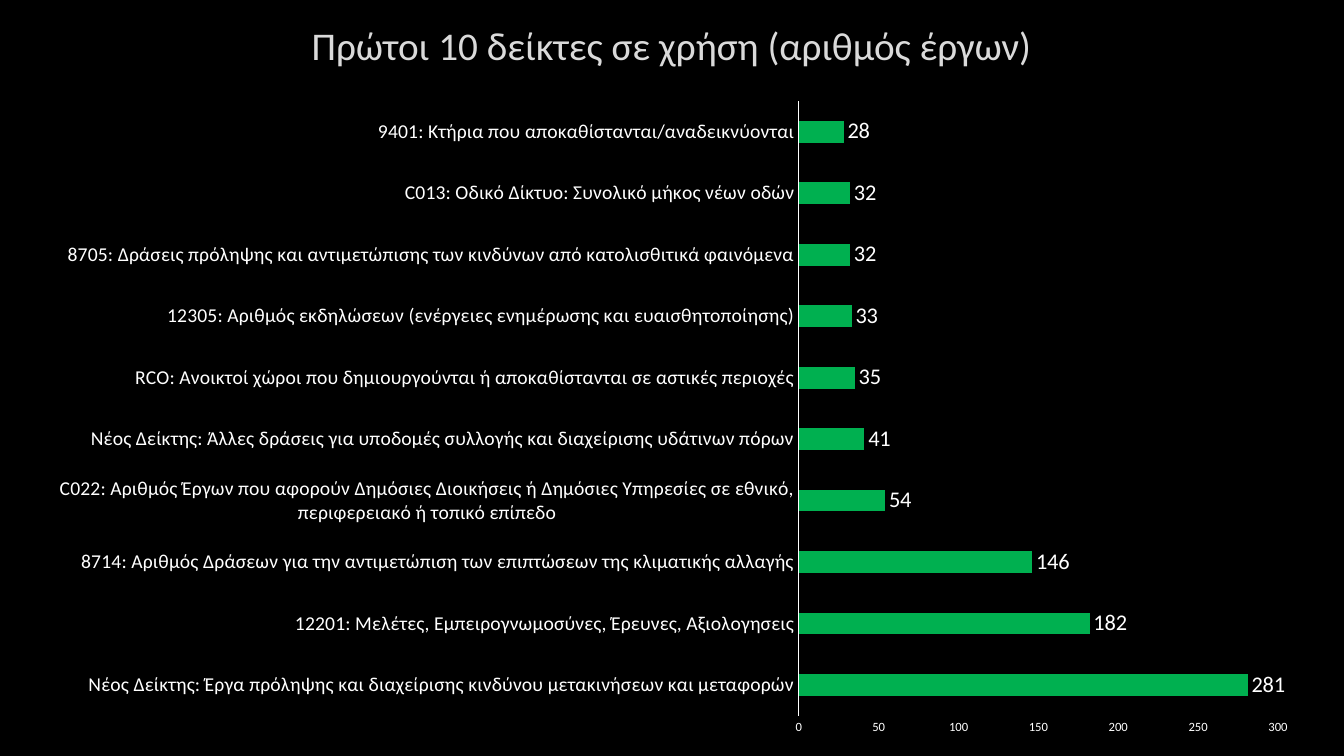
"""Build a slide with a bar chart of the ten most used indicators."""
from dataclasses import dataclass

from lxml import etree
from pptx import Presentation
from pptx.chart.data import CategoryChartData
from pptx.dml.color import RGBColor
from pptx.enum.chart import XL_CHART_TYPE, XL_LABEL_POSITION, XL_TICK_MARK
from pptx.enum.text import MSO_ANCHOR, PP_ALIGN
from pptx.oxml.ns import qn
from pptx.util import Pt

BAR_CLUSTERED = XL_CHART_TYPE.BAR_CLUSTERED
OUTSIDE_END = XL_LABEL_POSITION.OUTSIDE_END
NO_TICK = XL_TICK_MARK.NONE
TOP = MSO_ANCHOR.TOP
CENTER = PP_ALIGN.CENTER

TITLE = "Πρώτοι 10 δείκτες σε χρήση (αριθμός έργων)"
SERIES_NAME = "Series 1"
INDICATORS = [
    ("Νέος Δείκτης: Έργα πρόληψης και διαχείρισης κινδύνου μετακινήσεων και μεταφορών", 281),
    ("12201: Μελέτες, Εμπειρογνωμοσύνες, Έρευνες, Αξιολογησεις", 182),
    ("8714: Αριθμός Δράσεων για την αντιμετώπιση των επιπτώσεων της κλιματικής αλλαγής", 146),
    ("C022: Αριθμός Έργων που αφορούν Δημόσιες Διοικήσεις ή Δημόσιες Υπηρεσίες σε εθνικό, "
     "περιφερειακό ή τοπικό επίπεδο", 54),
    ("Νέος Δείκτης: Άλλες δράσεις για υποδομές συλλογής και διαχείρισης υδάτινων πόρων", 41),
    ("RCO: Ανοικτοί χώροι που δημιουργούνται ή αποκαθίστανται σε αστικές περιοχές", 35),
    ("12305: Αριθμός εκδηλώσεων (ενέργειες ενημέρωσης και ευαισθητοποίησης)", 33),
    ("8705: Δράσεις πρόληψης και αντιμετώπισης των κινδύνων από κατολισθιτικά φαινόμενα", 32),
    ("C013: Οδικό Δίκτυο: Συνολικό μήκος νέων οδών", 32),
    ("9401: Κτήρια που αποκαθίστανται/αναδεικνύονται", 28),
]

SLIDE_SIZE = (960, 540)
TITLE_BOX = (72, 11.5, 815, 51)
CHART_BOX = (24.5, 62.6, 913.7, 471.6)
PLOT_BOX = (570.7, 72.1, 342.2, 439.3)


@dataclass(frozen=True)
class Theme:
    """Colours, font and type sizes of the slide."""

    background: RGBColor = RGBColor(0x00, 0x00, 0x00)
    title: RGBColor = RGBColor(0xDA, 0xDA, 0xDA)
    text: RGBColor = RGBColor(0xFF, 0xFF, 0xFF)
    bar: RGBColor = RGBColor(0x00, 0xB0, 0x50)
    font: str = "Calibri"
    title_size: float = 28
    chart_size: float = 10
    category_size: float = 14
    value_size: float = 9
    label_size: float = 16


THEME = Theme()


def format_font(font, size, color=THEME.text):
    """Apply the theme font with a size and colour."""
    font.name = THEME.font
    font.size = Pt(size)
    font.color.rgb = color


def write_text(shape, text, size, color, alignment, anchor):
    """Put one formatted paragraph in a shape."""
    frame = shape.text_frame
    frame.word_wrap = True
    frame.vertical_anchor = anchor
    frame.text = text
    paragraph = frame.paragraphs[0]
    paragraph.alignment = alignment
    format_font(paragraph.runs[0].font, size, color)


def place_plot(chart):
    """Fix the inner plot area inside the chart frame."""
    plot_area = chart.plots[0]._element.getparent()
    for old_layout in plot_area.findall(qn("c:layout")):
        plot_area.remove(old_layout)
    layout = etree.Element(qn("c:layout"))
    plot_area.insert(0, layout)
    manual = etree.SubElement(layout, qn("c:manualLayout"))
    left, top, width, height = PLOT_BOX
    chart_left, chart_top, chart_width, chart_height = CHART_BOX
    settings = {
        "layoutTarget": "inner", "xMode": "edge", "yMode": "edge",
        "x": (left - chart_left) / chart_width,
        "y": (top - chart_top) / chart_height,
        "w": width / chart_width,
        "h": height / chart_height,
    }
    for name, value in settings.items():
        etree.SubElement(manual, qn(f"c:{name}")).set("val", str(value))


def format_axis(axis, size):
    """Remove ticks and gridlines and set the label font."""
    axis.has_major_gridlines = False
    axis.major_tick_mark = axis.minor_tick_mark = NO_TICK
    format_font(axis.tick_labels.font, size)


def add_indicator_chart(slide):
    """Add the bar chart of indicators."""
    data = CategoryChartData()
    data.categories = [name for name, _ in INDICATORS]
    data.add_series(SERIES_NAME, [count for _, count in INDICATORS])
    chart = slide.shapes.add_chart(BAR_CLUSTERED, *map(Pt, CHART_BOX), data).chart
    chart.has_legend = False
    chart.has_title = False
    format_font(chart.font, THEME.chart_size)

    format_axis(chart.category_axis, THEME.category_size)
    axis_line = chart.category_axis.format.line
    axis_line.color.rgb = THEME.text
    axis_line.width = Pt(0.75)
    value_axis = chart.value_axis
    format_axis(value_axis, THEME.value_size)
    value_axis.format.line.fill.background()
    value_axis.minimum_scale, value_axis.maximum_scale, value_axis.major_unit = 0, 300, 50

    plot = chart.plots[0]
    plot.gap_width = 182
    plot.vary_by_categories = False
    fill = plot.series[0].format.fill
    fill.solid()
    fill.fore_color.rgb = THEME.bar
    labels = plot.series[0].data_labels
    labels.show_value = True
    labels.position = OUTSIDE_END
    format_font(labels.font, THEME.label_size)
    place_plot(chart)


def main():
    """Build and save the presentation."""
    presentation = Presentation()
    presentation.slide_width, presentation.slide_height = map(Pt, SLIDE_SIZE)
    slide = presentation.slides.add_slide(presentation.slide_layouts.get_by_name("Title Only"))
    background = slide.background.fill
    background.solid()
    background.fore_color.rgb = THEME.background
    add_indicator_chart(slide)
    title = slide.shapes.title
    title.left, title.top, title.width, title.height = map(Pt, TITLE_BOX)
    write_text(title, TITLE, size=THEME.title_size, color=THEME.title,
               alignment=CENTER, anchor=TOP)
    presentation.save("out.pptx")


if __name__ == "__main__":
    main()
